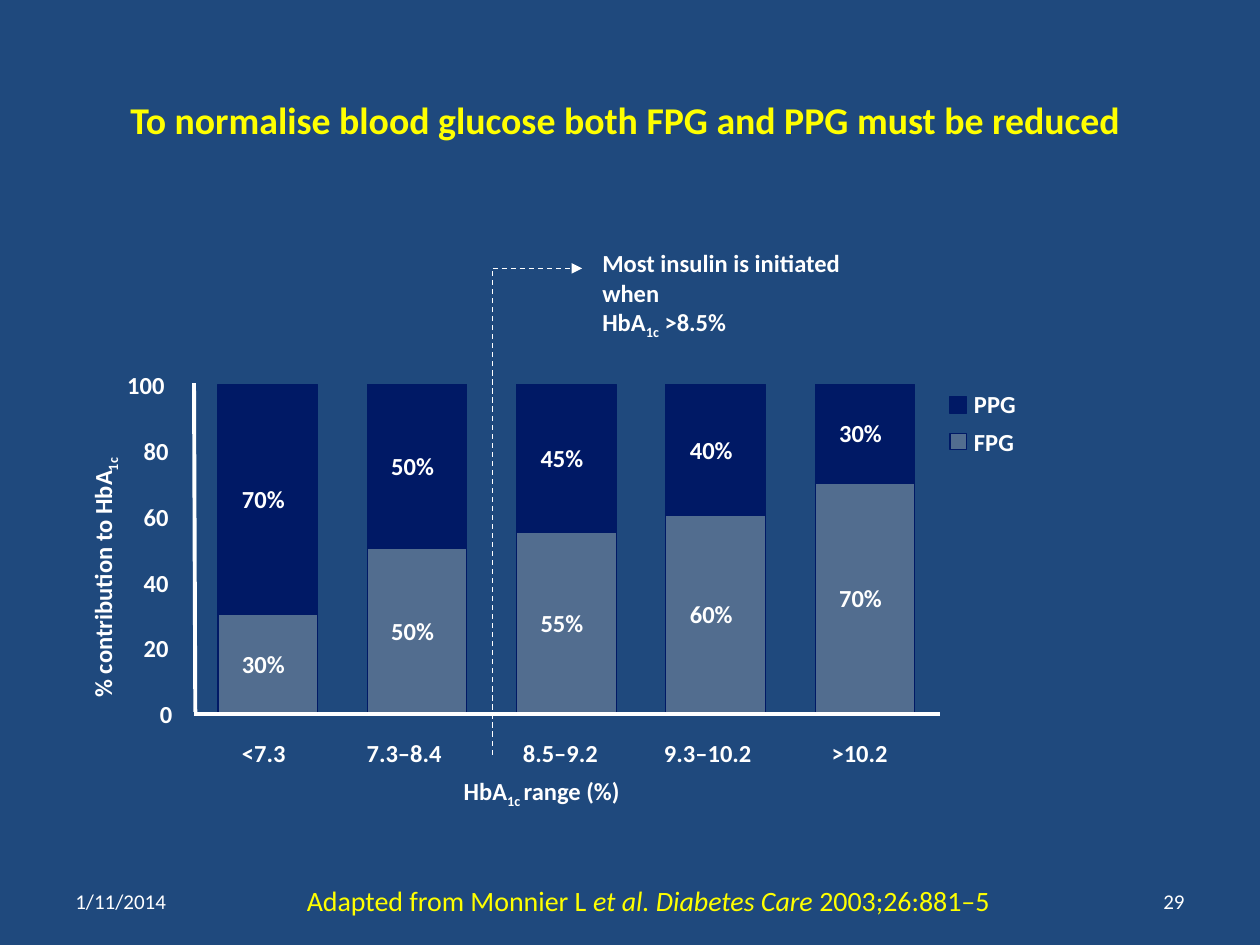
from pptx import Presentation
from pptx import util as u
from pptx.dml.color import RGBColor
from pptx.enum import dml, shapes, text
from pptx.oxml.ns import qn
from lxml import etree

FONT = "Calibri"
WHITE, YELLOW, NAVY, GREY, BLUE = "FFFFFF", "FFFF00", "001965", "B2B2B2", "1F497D"

# Chart geometry, in inches
BAR_LEFT, BAR_PITCH, BAR_WIDTH = 1.73, 1.185, 0.79
PLOT_TOP, PLOT_HEIGHT = 3.05, 2.61
LABEL_HEIGHT = 0.24

# Range, left edge and width of its label, FPG share
RANGES = [
    ("<7.3", 1.92, 0.35, 30),
    ("7.3–8.4", 2.91, 0.6, 50),
    ("8.5–9.2", 4.15, 0.6, 55),
    ("9.3–10.2", 5.27, 0.7, 60),
    (">10.2", 6.6, 0.45, 70),
]


def rgb(value):
    return RGBColor.from_string(value)


def box(x, y, w, h):
    return [u.Inches(v) for v in (x, y, w, h)]


def style(p, size, color, bold=False):
    p.font.name = FONT
    p.font.size = u.Pt(size)
    p.font.bold = bold
    p.font.color.rgb = rgb(color)


def add_text(s, content, x, y, w, h=LABEL_HEIGHT, size=14, color=WHITE,
             bold=True, wrap=False):
    """Add a text box without margins; content is a list of (text, kind) runs."""
    sp = s.shapes.add_textbox(*box(x, y, w, h))
    tf = sp.text_frame
    tf.margin_left = tf.margin_right = tf.margin_top = tf.margin_bottom = 0
    tf.word_wrap = wrap
    tf.auto_size = text.MSO_AUTO_SIZE.SHAPE_TO_FIT_TEXT
    p = tf.paragraphs[0]
    style(p, size, color, bold)
    for part, kind in content:
        if kind == "break":
            p.add_line_break()
            continue
        r = p.add_run()
        r.text = part
        if kind == "italic":
            r.font.italic = True
        elif kind == "sub":
            r._r.get_or_add_rPr().set("baseline", "-25000")
    return sp


def add_label(s, label, x, y, w):
    return add_text(s, [(label, "")], x, y, w)


def add_block(s, x, y, w, h, color, alpha=None):
    sp = s.shapes.add_shape(shapes.MSO_SHAPE.RECTANGLE, *box(x, y, w, h))
    sp.shadow.inherit = False
    sp.fill.solid()
    sp.fill.fore_color.rgb = rgb(color)
    if alpha:
        clr = sp.fill._xPr.find(qn("a:solidFill"))[0]
        etree.SubElement(clr, qn("a:alpha")).set("val", str(alpha * 1000))
    sp.line.color.rgb = rgb(NAVY)
    sp.line.width = u.Pt(0.63)


def add_fpg(s, x, y, w, h):
    add_block(s, x, y, w, h, GREY, alpha=35)


def add_ppg(s, x, y, w, h):
    add_block(s, x, y, w, h, NAVY)


def add_line(parent, x1, y1, x2, y2, width, dash=False, arrow=False):
    cn = parent.shapes.add_connector(shapes.MSO_CONNECTOR.STRAIGHT, *box(x1, y1, x2, y2))
    cn.line.color.rgb = rgb(WHITE)
    cn.line.width = u.Pt(width)
    if dash:
        cn.line.dash_style = dml.MSO_LINE.DASH
    if arrow:
        etree.SubElement(cn.line._get_or_add_ln(), qn("a:tailEnd")).set("type", "triangle")
    etree.SubElement(cn._element.spPr, qn("a:effectLst"))


def add_title(s, title):
    sp = s.shapes.title
    sp.left, sp.top, sp.width, sp.height = box(0.52, 0.51, 8.89, 0.88)
    tf = sp.text_frame
    tf.text = title
    tf.vertical_anchor = text.MSO_ANCHOR.MIDDLE
    p = tf.paragraphs[0]
    p.alignment = text.PP_ALIGN.CENTER
    style(p, 21.6, YELLOW, bold=True)


def add_footer(s, label, x, align):
    sp = s.shapes.add_textbox(*box(x, 6.95, 2.33, 0.4))
    tf = sp.text_frame
    tf.word_wrap = True
    tf.vertical_anchor = text.MSO_ANCHOR.MIDDLE
    p = tf.paragraphs[0]
    p.text = label
    p.alignment = align
    style(p, 12, WHITE)


def add_bars(s):
    for i, (name, name_left, name_width, fpg) in enumerate(RANGES):
        x = BAR_LEFT + i * BAR_PITCH
        ppg = 100 - fpg
        split = PLOT_TOP + PLOT_HEIGHT * ppg / 100
        for add, share, top in ((add_fpg, fpg, split), (add_ppg, ppg, PLOT_TOP)):
            h = PLOT_HEIGHT * share / 100
            add(s, x, top, BAR_WIDTH, h)
            add_label(s, f"{share}%", x + 0.19, top + (h - LABEL_HEIGHT) / 2, 0.35)
        add_label(s, name, name_left, 5.86, name_width)


def add_axes(s):
    add_line(s, 1.54, 5.67, 7.46, 5.67, 2.25)
    add_line(s, 1.54, 3.04, 1.55, 5.65, 2.25)
    for value in range(0, 101, 20):
        label = str(value)
        n = len(label)
        add_label(s, label, 1.4 - 0.13 * n, 5.55 - PLOT_HEIGHT * value / 100, 0.1 * n)
    add_text(s, [("HbA", ""), ("1c ", "sub"), ("range (%)", "")], 3.68, 6.16, 1.27)
    sp = add_text(s, [("% contribution to HbA", ""), ("1c", "sub")],
                  -0.93, 3.67, 3.49, wrap=True)
    sp.rotation = 270


def add_legend(s):
    for i, (name, add) in enumerate((("PPG", add_ppg), ("FPG", add_fpg))):
        add(s, 7.54, 3.15 + 0.29 * i, 0.13, 0.13)
        add_label(s, name, 7.73, 3.09 + 0.3 * i, 0.38)


def add_callout(s):
    grp = s.shapes.add_group_shape()
    add_line(grp, 3.91, 5.99, 3.91, 2.13, 0.75, dash=True)
    add_line(grp, 3.91, 2.13, 4.62, 2.13, 0.75, dash=True, arrow=True)
    add_text(s, [("Most insulin is initiated when ", ""), ("", "break"), ("HbA", ""),
                 ("1c", "sub"), (" >8.5%", "")], 4.78, 1.97, 2.05, 0.71, wrap=True)


def add_reference(s):
    sp = add_text(s, [("Adapted from Monnier L ", ""), ("et al. Diabetes Care ", "italic"),
                      ("2003;26:881–5", "")], 1.85, 7.05, 6.38, 0.23,
                  size=16, color=YELLOW, bold=False, wrap=True)
    p = sp.text_frame.paragraphs[0]
    p.alignment = text.PP_ALIGN.CENTER
    p.line_spacing = 0.85
    pPr = p._p.get_or_add_pPr()
    pPr.set("marL", str(u.Inches(0.21)))
    pPr.set("indent", "0")


def main():
    prs = Presentation()
    prs.slide_width, prs.slide_height = u.Inches(10), u.Inches(7.5)
    s = prs.slides.add_slide(prs.slide_layouts[5])
    s.background.fill.solid()
    s.background.fill.fore_color.rgb = rgb(BLUE)

    add_title(s, "To normalise blood glucose both FPG and PPG must be reduced")
    # Stacked bars with their axes and key
    add_bars(s)
    add_axes(s)
    add_legend(s)
    # Insulin threshold
    add_callout(s)
    # Bottom row
    add_reference(s)
    add_footer(s, "1/11/2014", 0.5, text.PP_ALIGN.LEFT)
    add_footer(s, "29", 7.17, text.PP_ALIGN.RIGHT)
    prs.save("out.pptx")


if __name__ == "__main__":
    main()
